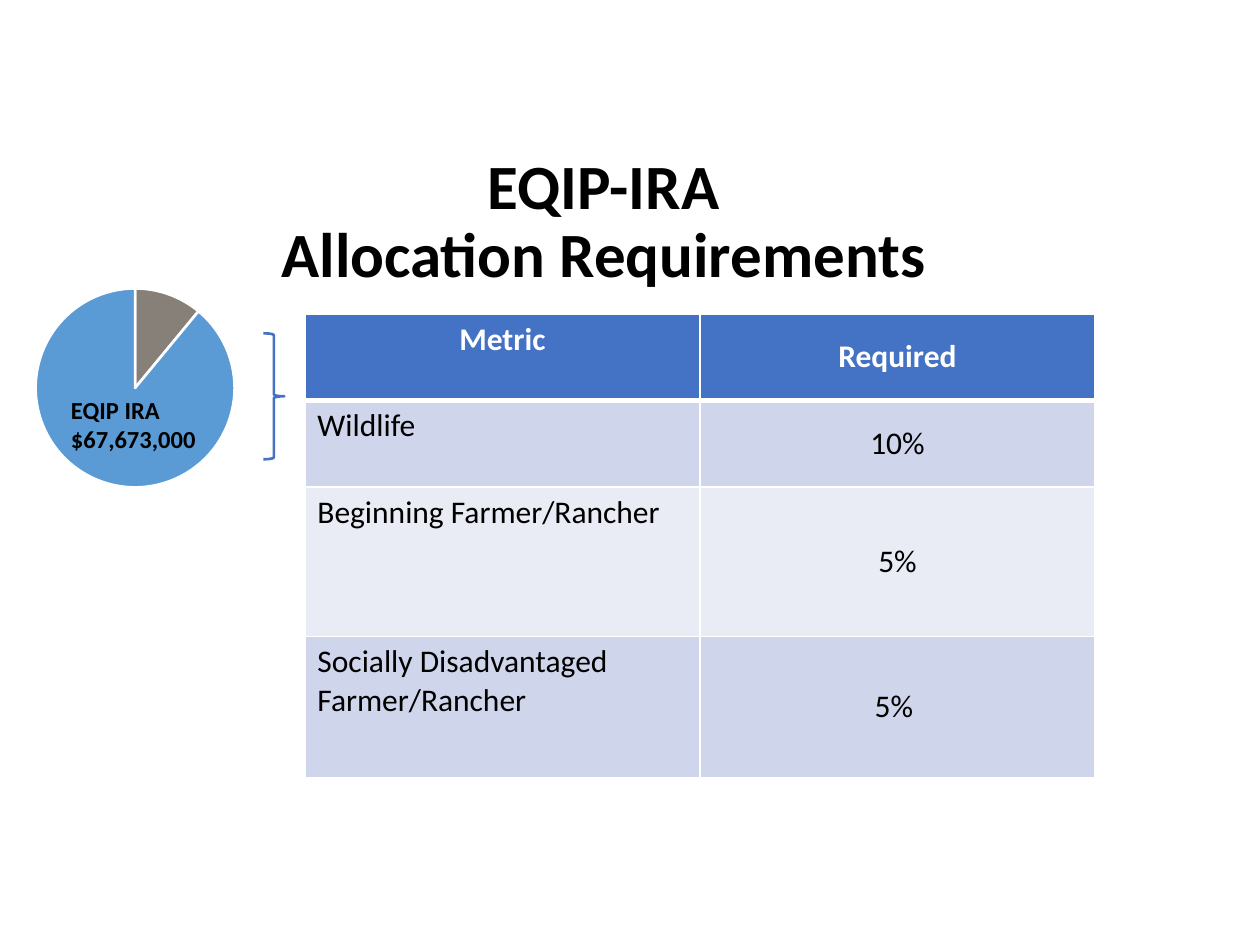
"""Build the EQIP-IRA allocation requirements slide."""
from lxml import etree
from pptx import Presentation
from pptx.chart.data import CategoryChartData
from pptx.dml.color import RGBColor
from pptx.enum.chart import XL_CHART_TYPE
from pptx.enum.shapes import MSO_SHAPE
from pptx.enum.text import MSO_ANCHOR, PP_ALIGN
from pptx.oxml import parse_xml
from pptx.oxml.ns import nsdecls
from pptx.util import Pt

PIE = XL_CHART_TYPE.PIE
RIGHT_BRACE = MSO_SHAPE.RIGHT_BRACE
TOP, MIDDLE = MSO_ANCHOR.TOP, MSO_ANCHOR.MIDDLE
LEFT, CENTER = PP_ALIGN.LEFT, PP_ALIGN.CENTER

THEME = {
    "font": "Calibri",
    "title": 36, "table": 18, "label": 14, "chart": 10,
    "text": "000000", "white": "FFFFFF", "accent": "4472C4",
    "bands": ("CFD5EA", "E9EBF5"),
    "slices": ("878078", "5B9BD5"),
}


def color(name):
    return RGBColor.from_string(THEME.get(name, name))


def style(font, size, ink="text", bold=False):
    font.name = THEME["font"]
    font.size = Pt(THEME[size])
    font.color.rgb = color(ink)
    font.bold = bold


prs = Presentation()
prs.slide_width, prs.slide_height = Pt(720), Pt(540)
slide = prs.slides.add_slide(prs.slide_layouts[6])

title = slide.shapes.add_textbox(Pt(19.5), Pt(85), Pt(651), Pt(65.5)).text_frame
title.word_wrap = True
title.text = "EQIP-IRA\vAllocation Requirements"
heading = title.paragraphs[0]
heading.alignment = CENTER
heading.line_spacing = 0.9
style(heading.font, "title", bold=True)

requirements = [
    ("Metric", "Required"),
    ("Wildlife", "10%"),
    ("Beginning Farmer/Rancher", "5%"),
    ("Socially Disadvantaged Farmer/Rancher", "5% "),
]
row_heights = (49.5, 49.5, 85.5, 80.5)
table = slide.shapes.add_table(
    len(requirements), 2, Pt(174.2), Pt(179.3), Pt(451.6), Pt(sum(row_heights))).table
for column in table.columns:
    column.width = Pt(225.8)
for r, (entries, height) in enumerate(zip(requirements, row_heights)):
    table.rows[r].height = Pt(height)
    header = r == 0
    for c, entry in enumerate(entries):
        cell = table.cell(r, c)
        cell.text = entry
        cell.vertical_anchor = MIDDLE if c else TOP
        paragraph = cell.text_frame.paragraphs[0]
        paragraph.alignment = CENTER if header or c else LEFT
        style(paragraph.font, "table", "white" if header else "text", header)
        heavy_edge = {0: "lnB", 1: "lnT"}.get(r)
        for edge in ("lnL", "lnR", "lnT", "lnB"):
            width = Pt(3 if edge == heavy_edge else 1)
            cell.fill._xPr.append(parse_xml(
                f'<a:{edge} {nsdecls("a")} w="{width}"><a:solidFill>'
                f'<a:srgbClr val="{THEME["white"]}"/></a:solidFill></a:{edge}>'))
        cell.fill.solid()
        cell.fill.fore_color.rgb = color("accent" if header else THEME["bands"][(r - 1) % 2])

allocation = CategoryChartData()
allocation.categories = ["1", "2"]
allocation.add_series("Series 1", (11, 89))
pie = slide.shapes.add_chart(PIE, Pt(-7.2), Pt(154), Pt(170.6), Pt(135.4), allocation).chart
pie.has_legend = False
pie.has_title = False
style(pie.font, "chart")
pie.plots[0].vary_by_categories = True
for index, slice_color in enumerate(THEME["slices"]):
    slice_format = pie.plots[0].series[0].points[index].format
    slice_format.fill.solid()
    slice_format.fill.fore_color.rgb = color(slice_color)
    slice_format.line.color.rgb = color("white")
    slice_format.line.width = Pt(1.5)
plot_area = pie._chartSpace.chart.plotArea
for old_layout in plot_area.findall("c:layout", plot_area.nsmap):
    plot_area.remove(old_layout)
plot_area.insert(0, parse_xml(
    f'<c:layout {nsdecls("c")}><c:manualLayout><c:layoutTarget val="inner"/>'
    '<c:xMode val="edge"/><c:yMode val="edge"/><c:x val="0.16"/><c:y val="0.08"/>'
    '<c:w val="0.67"/><c:h val="0.84"/></c:manualLayout></c:layout>'))

amount = slide.shapes.add_textbox(Pt(33.5), Pt(222), Pt(91), Pt(41)).text_frame
amount.word_wrap = True
amount.text = "EQIP IRA $67,673,000"
style(amount.paragraphs[0].font, "label", bold=True)

brace = slide.shapes.add_shape(RIGHT_BRACE, Pt(150.5), Pt(190.5), Pt(12), Pt(72))
brace.shadow.inherit = False
brace.fill.background()
brace.line.color.rgb = color("accent")
brace.line.width = Pt(1.5)

prs.save("out.pptx")
